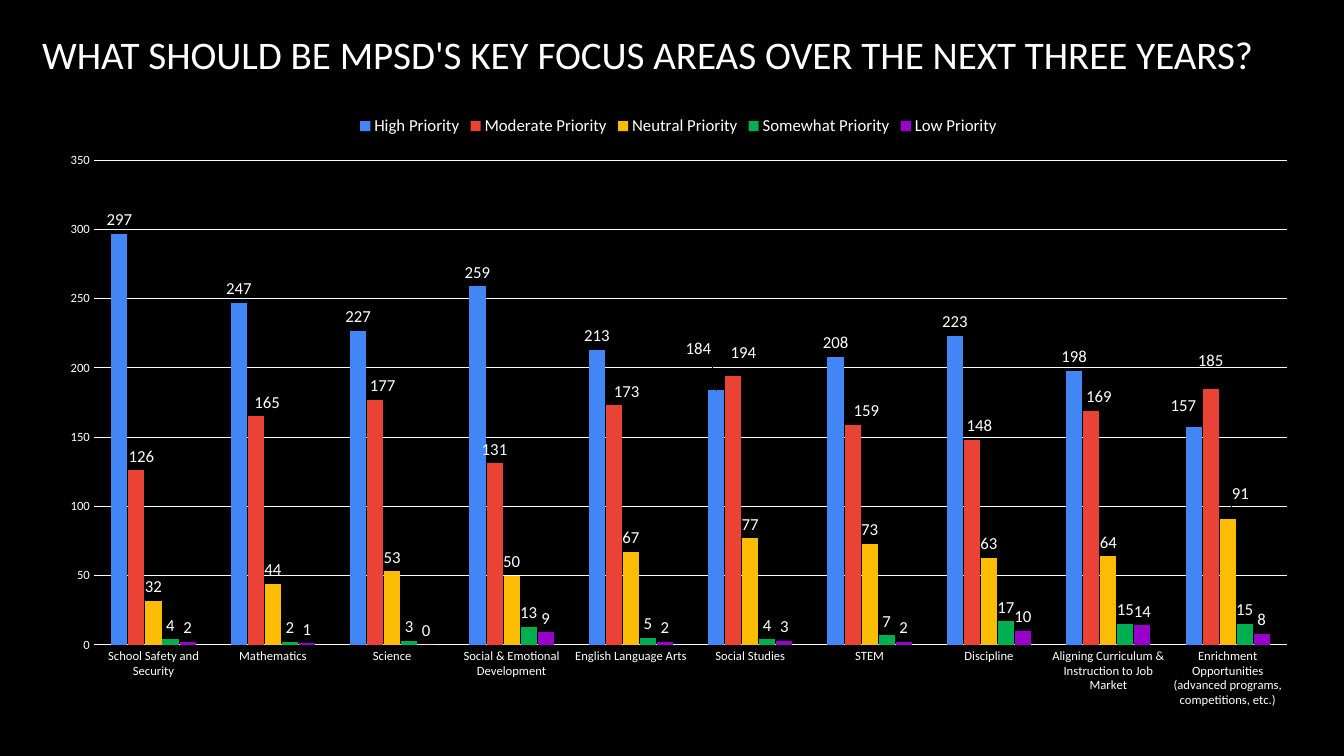
from dataclasses import dataclass

from lxml import etree
from pptx import Presentation
from pptx.chart.data import CategoryChartData
from pptx.dml.color import RGBColor
from pptx.enum.chart import XL_CHART_TYPE as ChartType
from pptx.enum.chart import XL_LABEL_POSITION as LabelPos
from pptx.enum.chart import XL_LEGEND_POSITION as LegendPos
from pptx.enum.chart import XL_TICK_MARK as TickMark
from pptx.enum.text import MSO_ANCHOR
from pptx.oxml.ns import qn
from pptx.util import Inches, Pt


@dataclass(frozen=True)
class Theme:
    """Colours and type sizes of the slide."""
    font: str = "Calibri"
    background: str = "000000"
    ink: str = "FFFFFF"
    title: float = 27.9
    label: float = 12
    axis: float = 9
    line: float = 0.75


THEME = Theme()

CATEGORIES = [
    "School Safety and Security", "Mathematics", "Science",
    "Social & Emotional Development", "English Language Arts",
    "Social Studies", "STEM", "Discipline",
    "Aligning Curriculum & Instruction to Job Market",
    "Enrichment Opportunities (advanced programs, competitions, etc.)",
]

PRIORITIES = [
    ("High Priority", "4285F4", [297, 247, 227, 259, 213, 184, 208, 223, 198, 157]),
    ("Moderate Priority", "EA4335", [126, 165, 177, 131, 173, 194, 159, 148, 169, 185]),
    ("Neutral Priority", "FBBC04", [32, 44, 53, 50, 67, 77, 73, 63, 64, 91]),
    ("Somewhat Priority", "00B050", [4, 2, 3, 13, 5, 4, 7, 17, 15, 15]),
    ("Low Priority", "9900CC", [2, 1, 0, 9, 2, 3, 2, 10, 14, 8]),
]

LABEL_SHIFTS = {
    "High Priority": {5: (-0.014, -0.045), 9: (-0.008, -0.013)},
    "Moderate Priority": {
        0: (0.004, 0), 1: (0.009, 0), 2: (0.006, 0), 4: (0.01, 0),
        5: (0.008, -0.015), 6: (0.011, 0), 7: (0.006, 0), 8: (0.006, 0),
        9: (0, -0.023),
    },
    "Neutral Priority": {9: (0.01, -0.018)},
}


def style_font(font, size):
    """Apply the theme font and ink at the given size."""
    font.name = THEME.font
    font.size = Pt(size)
    font.bold = False
    font.color.rgb = RGBColor.from_string(THEME.ink)


def style_line(line):
    """Give a chart line the theme ink and width."""
    line.color.rgb = RGBColor.from_string(THEME.ink)
    line.width = Pt(THEME.line)


def manual_layout(**settings):
    """Return a chart layout element with the given settings."""
    layout = etree.Element(qn("c:layout"))
    manual = etree.SubElement(layout, qn("c:manualLayout"))
    for name, value in settings.items():
        etree.SubElement(manual, qn(f"c:{name}")).set("val", str(value))
    return layout


def add_title(slide, text):
    """Add the slide heading."""
    sp = slide.shapes.add_textbox(Inches(0.32), Inches(0.21), Inches(12.88), Inches(0.64))
    tf = sp.text_frame
    tf.word_wrap = True
    tf.vertical_anchor = MSO_ANCHOR.MIDDLE
    tf.text = text
    style_font(tf.paragraphs[0].runs[0].font, THEME.title)


def style_axes(chart):
    """Format both axes and the gridlines."""
    for axis in (chart.category_axis, chart.value_axis):
        axis.major_tick_mark = axis.minor_tick_mark = TickMark.NONE
        style_font(axis.tick_labels.font, THEME.axis)
    style_line(chart.category_axis.format.line)
    values = chart.value_axis
    values.minimum_scale, values.maximum_scale, values.major_unit = 0, 350, 50
    values.format.line.fill.background()
    values.has_major_gridlines = True
    style_line(values.major_gridlines.format.line)


def style_series(series, color):
    """Colour a series and label its bars, shifting crowded labels."""
    series.format.fill.solid()
    series.format.fill.fore_color.rgb = RGBColor.from_string(color)
    series.invert_if_negative = False
    labels = series.data_labels
    labels.show_value = True
    labels.position = LabelPos.OUTSIDE_END
    style_font(labels.font, THEME.label)
    shifts = LABEL_SHIFTS.get(series.name, {})
    for index in shifts:
        label = series.points[index].data_label
        style_font(label.font, THEME.label)
        label.position = LabelPos.OUTSIDE_END
    for idx in series._element.findall(".//" + qn("c:dLbl") + "/" + qn("c:idx")):
        x, y = shifts[int(idx.get("val"))]
        idx.addnext(manual_layout(x=x, y=y))


def place_plot(chart):
    """Fix the inner plot area within the chart."""
    area = chart._chartSpace.find(".//" + qn("c:plotArea"))
    for layout in area.findall(qn("c:layout")):
        area.remove(layout)
    area.insert(0, manual_layout(layoutTarget="inner", xMode="edge", yMode="edge",
                                 x=0.039, y=0.09, w=0.941, h=0.787))


def add_priority_chart(slide):
    """Add the clustered columns of survey answers."""
    data = CategoryChartData()
    data.categories = CATEGORIES
    for name, _, values in PRIORITIES:
        data.add_series(name, values)
    chart = slide.shapes.add_chart(ChartType.COLUMN_CLUSTERED, Inches(0.44), Inches(1.04),
                                   Inches(12.58), Inches(6.11), data).chart
    style_font(chart.font, 10)
    chart.has_title = False
    chart.has_legend = True
    chart.legend.position = LegendPos.TOP
    chart.legend.include_in_layout = False
    style_font(chart.legend.font, THEME.label)
    plot = chart.plots[0]
    plot.gap_width, plot.overlap, plot.vary_by_categories = 219, -6, False
    style_axes(chart)
    for series, (_, color, _) in zip(plot.series, PRIORITIES):
        style_series(series, color)
    place_plot(chart)


def main():
    """Build and save the slide."""
    prs = Presentation()
    prs.slide_width, prs.slide_height = Inches(13.33), Inches(7.5)
    slide = prs.slides.add_slide(prs.slide_layouts[6])
    slide.background.fill.solid()
    slide.background.fill.fore_color.rgb = RGBColor.from_string(THEME.background)
    add_title(slide, "WHAT SHOULD BE MPSD'S KEY FOCUS AREAS OVER THE NEXT THREE YEARS?")
    add_priority_chart(slide)
    prs.save("out.pptx")


if __name__ == "__main__":
    main()
